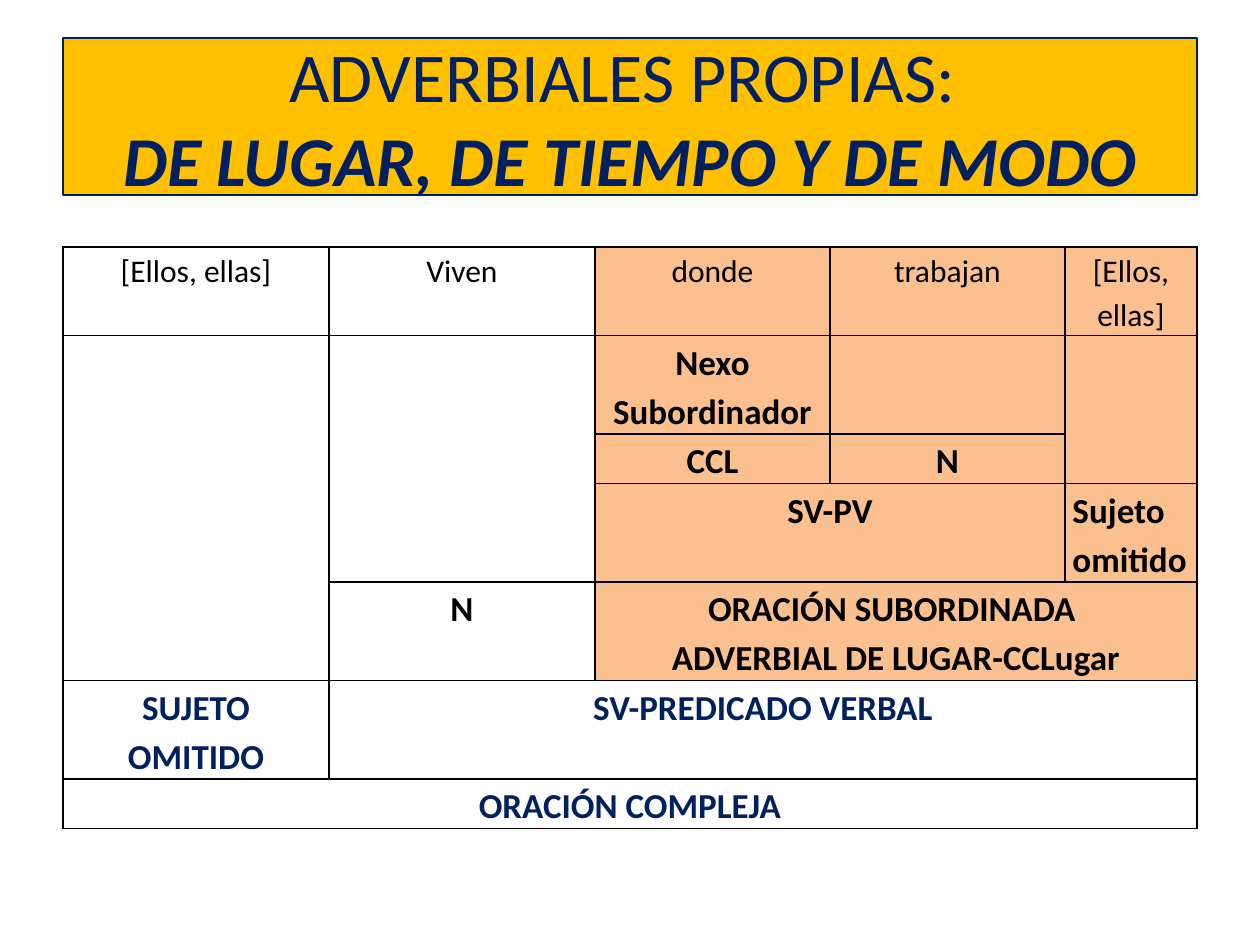
"""Build a slide that analyses a Spanish adverbial clause of place in a table."""
from lxml import etree
from pptx import Presentation, util as u
from pptx.dml.color import RGBColor
from pptx.enum import text
from pptx.oxml.ns import qn

PX = 914400 // 126
FONT = "Calibri"
COLORS = {"navy": "002060", "gold": "FFC000", "peach": "FAC090", "black": "000000"}

TITLE = ("ADVERBIALES PROPIAS: ", "DE LUGAR, DE TIEMPO Y DE MODO")
TITLE_BOX = (63, 38, 1134, 157)
TABLE_AT = (63, 247)
COLUMNS = (266, 266, 235, 235, 132)
ROWS = (88, 98, 49, 98, 98, 98, 49)
WORDS = [
    ["[Ellos, ellas]", "Viven", "donde", "trabajan", "[Ellos, ellas]"],
    ["", "", "Nexo Subordinador", "", ""],
    ["", "", "CCL", "N", ""],
    ["", "", "SV-PV", "", "Sujeto omitido"],
    ["", "N", "ORACIÓN SUBORDINADA \nADVERBIAL DE LUGAR-CCLugar", "", ""],
    ["SUJETO OMITIDO", "SV-PREDICADO VERBAL", "", "", ""],
    ["ORACIÓN COMPLEJA", "", "", "", ""],
]
MERGES = [((1, 0), (4, 0)), ((1, 1), (3, 1)), ((1, 4), (2, 4)), ((3, 2), (3, 3)),
          ((4, 2), (4, 4)), ((5, 1), (5, 4)), ((6, 0), (6, 4))]
MAIN_CLAUSE_ROW = 5
SUBORDINATE_COLUMN = 2
LEFT_ALIGNED = (3, 4)


def color(name):
    return RGBColor.from_string(COLORS[name])


def style(run, size, shade, bold=False, italic=False):
    font = run.font
    font.name, font.size, font.bold, font.italic = FONT, u.Pt(size), bold, italic
    font.color.rgb = color(shade)


def add_borders(cell):
    properties = cell._tc.get_or_add_tcPr()
    for side in ("a:lnL", "a:lnR", "a:lnT", "a:lnB"):
        line = etree.SubElement(properties, qn(side), w=str(u.Pt(1)))
        fill = etree.SubElement(line, qn("a:solidFill"))
        etree.SubElement(fill, qn("a:srgbClr"), val=COLORS["black"])


def add_title(slide):
    title = slide.shapes.title
    title.left, title.top, title.width, title.height = (n * PX for n in TITLE_BOX)
    title.fill.solid()
    title.fill.fore_color.rgb = color("gold")
    title.line.color.rgb = color("navy")
    title.line.width = u.Pt(0.75)
    frame = title.text_frame
    frame.text = "\v".join(TITLE)
    frame.auto_size = text.MSO_AUTO_SIZE.NONE
    frame.vertical_anchor = text.MSO_ANCHOR.MIDDLE
    heading = frame.paragraphs[0]
    heading.alignment = text.PP_ALIGN.CENTER
    for run, strong in zip(heading.runs, (False, True)):
        style(run, 40, "navy", strong, strong)


def fill_cell(cell, row, column):
    add_borders(cell)
    if row < MAIN_CLAUSE_ROW and column >= SUBORDINATE_COLUMN:
        cell.fill.solid()
        cell.fill.fore_color.rgb = color("peach")
    else:
        cell.fill.background()
    cell.margin_left = cell.margin_right = u.Inches(0.06)
    cell.margin_top = cell.margin_bottom = 0
    cell.text_frame.text = WORDS[row][column]
    for paragraph in cell.text_frame.paragraphs:
        left = (row, column) == LEFT_ALIGNED
        paragraph.alignment = text.PP_ALIGN.LEFT if left else text.PP_ALIGN.CENTER
        paragraph.line_spacing = 1.15
        for run in paragraph.runs:
            style(run, 20 if row else 18,
                  "navy" if row >= MAIN_CLAUSE_ROW else "black", row > 0)


def add_analysis(slide):
    box = [n * PX for n in (*TABLE_AT, sum(COLUMNS), sum(ROWS))]
    analysis = slide.shapes.add_table(len(ROWS), len(COLUMNS), *box).table
    analysis.first_row = analysis.horz_banding = False
    for column, width in zip(analysis.columns, COLUMNS):
        column.width = width * PX
    for row, height in zip(analysis.rows, ROWS):
        row.height = height * PX
    for first, last in MERGES:
        analysis.cell(*first).merge(analysis.cell(*last))
    for row in range(len(ROWS)):
        for column in range(len(COLUMNS)):
            fill_cell(analysis.cell(row, column), row, column)


def main():
    deck = Presentation()
    deck.slide_width, deck.slide_height = 1260 * PX, 945 * PX
    slide = deck.slides.add_slide(deck.slide_layouts[5])
    add_analysis(slide)
    add_title(slide)
    deck.save("out.pptx")


if __name__ == "__main__":
    main()
